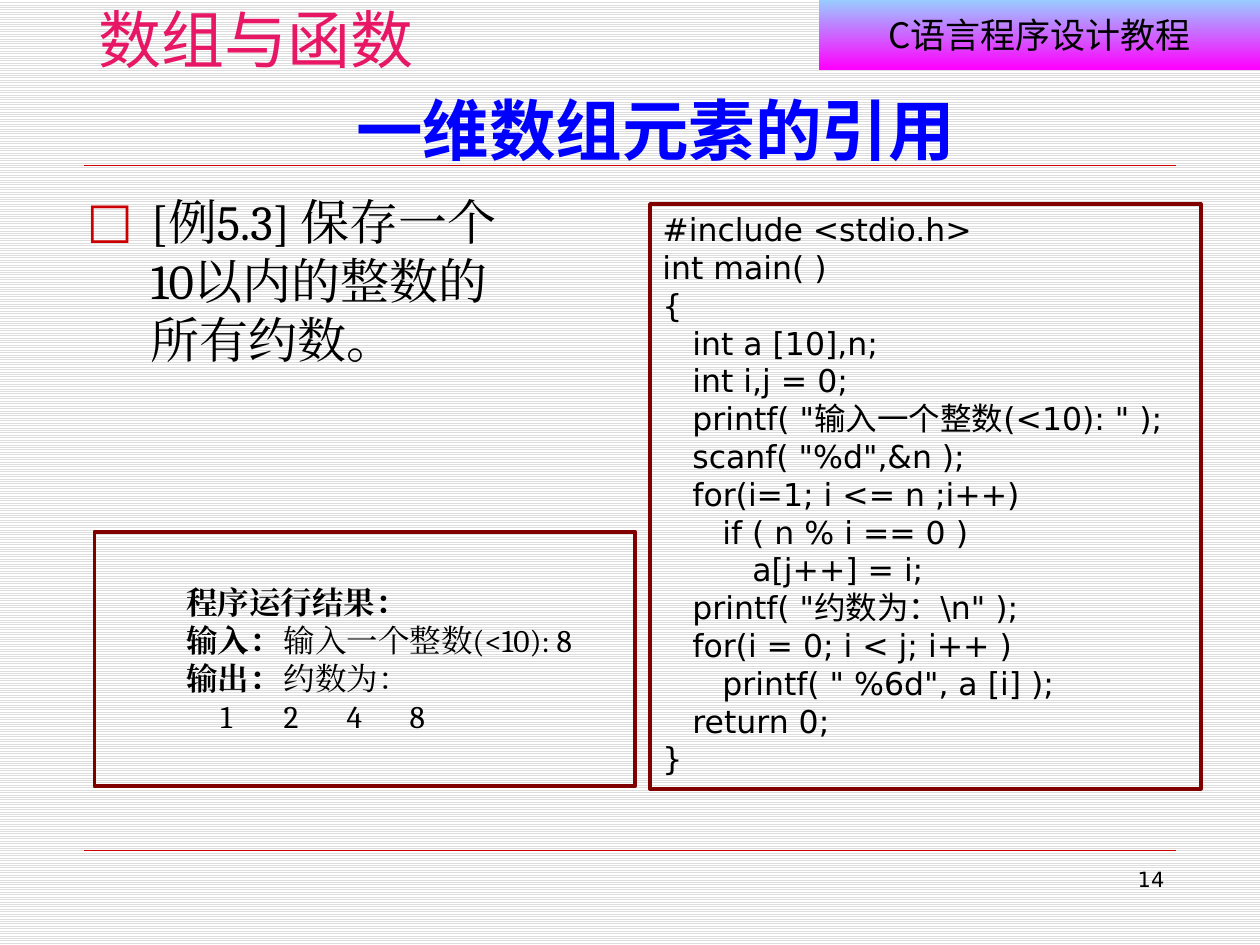
"""Build the slide on referencing elements of a one-dimensional array."""
from dataclasses import dataclass

from lxml import etree
from pptx import Presentation
from pptx.dml.color import RGBColor
from pptx.enum.dml import MSO_PATTERN
from pptx.enum.shapes import MSO_CONNECTOR, MSO_SHAPE
from pptx.enum.text import MSO_ANCHOR, PP_ALIGN
from pptx.oxml.ns import qn
from pptx.util import Inches, Pt

LIGHT_HORIZONTAL = MSO_PATTERN.LIGHT_HORIZONTAL
STRAIGHT = MSO_CONNECTOR.STRAIGHT
RECTANGLE = MSO_SHAPE.RECTANGLE
TOP, MIDDLE, BOTTOM = MSO_ANCHOR.TOP, MSO_ANCHOR.MIDDLE, MSO_ANCHOR.BOTTOM
LEFT, CENTER, RIGHT = PP_ALIGN.LEFT, PP_ALIGN.CENTER, PP_ALIGN.RIGHT


@dataclass(frozen=True)
class Theme:
    """Colours, fonts and type sizes of the slide."""
    stripe: str = "DDDDDD"
    paper: str = "FFFFFF"
    ink: str = "000000"
    rule: str = "CC0000"
    frame: str = "800000"
    title: str = "0000FF"
    chapter: str = "E81766"
    banner_top: str = "99CCFF"
    banner_bottom: str = "FF00FF"
    sans: str = "DejaVu Sans"
    serif: str = "Cambria"
    banner_font: str = "Noto Sans CJK SC"
    chapter_font: str = "Noto Sans CJK JP"
    title_size: int = 38
    chapter_size: int = 36
    body_size: int = 28
    banner_size: int = 20
    code_size: int = 18
    number_size: int = 12


THEME = Theme()

CODE = r'''#include <stdio.h>
int main( )
{
   int a [10],n;
   int i,j = 0;
   printf( "输入一个整数(<10): " );
   scanf( "%d",&n );
   for(i=1; i <= n ;i++)
      if ( n % i == 0 )
         a[j++] = i;
   printf( "约数为：\n" );
   for(i = 0; i < j; i++ )
      printf( " %6d", a [i] );
   return 0;
}'''

RESULTS = [
    ("程序运行结果：", ""),
    ("输入：", "\t输入一个整数(<10): 8"),
    ("输出：", "\t约数为："),
    ("", "\t1\t2\t4\t8"),
]
RESULT_INDENT = 0.73
RESULT_TABS = [1.69 + 0.39 * column for column in range(4)]


def rgb(value):
    """Turn a hex string into a colour."""
    return RGBColor.from_string(value)


def add_run(paragraph, text, font, size, color=THEME.ink, bold=False):
    """Append a run whose Latin and East Asian fonts agree."""
    run = paragraph.add_run()
    run.text = text
    settings = {"name": font, "size": Pt(size), "bold": bold}
    for attribute, value in settings.items():
        setattr(run.font, attribute, value)
    run.font.color.rgb = rgb(color)
    east_asian = etree.SubElement(run.font._element, qn("a:ea"))
    east_asian.set("typeface", font)


def set_frame(shape, anchor=TOP, wrap=True, side=0.1, edge=0.05):
    """Set the anchor, wrapping and insets of a shape's text."""
    frame = shape.text_frame
    settings = {
        "word_wrap": wrap,
        "vertical_anchor": anchor,
        "margin_left": Inches(side),
        "margin_right": Inches(side),
        "margin_top": Inches(edge),
        "margin_bottom": Inches(edge),
    }
    for attribute, value in settings.items():
        setattr(frame, attribute, value)
    return frame


def add_label(slide, box, text, font, size, color=THEME.ink, bold=False,
              align=LEFT, **layout):
    """Add a one-paragraph text box and return the paragraph."""
    label = slide.shapes.add_textbox(*map(Inches, box))
    paragraph = set_frame(label, **layout).paragraphs[0]
    paragraph.alignment = align
    add_run(paragraph, text, font, size, color, bold)
    return paragraph


def add_rule(slide, top):
    """Draw a thin horizontal rule across the content width."""
    rule = slide.shapes.add_connector(
        STRAIGHT, Inches(0.67), Inches(top), Inches(9.33), Inches(top))
    rule.line.color.rgb = rgb(THEME.rule)
    rule.line.width = Pt(0.25)
    etree.SubElement(rule._element.spPr, qn("a:effectLst"))


def add_panel(slide, box):
    """Add an unfilled framed rectangle."""
    panel = slide.shapes.add_shape(RECTANGLE, *map(Inches, box))
    panel.shadow.inherit = False
    panel.fill.background()
    panel.line.color.rgb = rgb(THEME.frame)
    panel.line.width = Pt(2.25)
    return panel


def add_banner(slide):
    """Add the gradient banner with the course name."""
    banner = slide.shapes.add_shape(
        RECTANGLE, Inches(6.5), Inches(0), Inches(3.5), Inches(0.55))
    banner.shadow.inherit = False
    banner.line.fill.background()
    banner.fill.gradient()
    banner.fill.gradient_angle = 270
    colors = (THEME.banner_top, THEME.banner_bottom)
    for stop, color in zip(banner.fill.gradient_stops, colors):
        stop.color.rgb = rgb(color)
    paragraph = set_frame(banner, MIDDLE).paragraphs[0]
    paragraph.alignment = CENTER
    add_run(paragraph, "C语言程序设计教程", THEME.banner_font, THEME.banner_size)


def add_bullet(paragraph, indent):
    """Give a paragraph a hanging square bullet."""
    properties = paragraph._p.get_or_add_pPr()
    properties.set("marL", str(Inches(indent)))
    properties.set("indent", str(-Inches(indent)))
    color = etree.SubElement(properties, qn("a:buClr"))
    etree.SubElement(color, qn("a:srgbClr")).set("val", THEME.rule)
    etree.SubElement(properties, qn("a:buFont")).set("typeface", THEME.sans)
    etree.SubElement(properties, qn("a:buChar")).set("char", "□")


def add_tabs(paragraph, indent, positions):
    """Set the first-line indent and left tab stops of a paragraph."""
    properties = paragraph._p.get_or_add_pPr()
    properties.set("marL", "0")
    properties.set("indent", str(Inches(indent)))
    tabs = etree.SubElement(properties, qn("a:tabLst"))
    for position in positions:
        etree.SubElement(tabs, qn("a:tab"), pos=str(Inches(position)), algn="l")


def add_lines(frame, count):
    """Yield the given number of left-aligned paragraphs."""
    for index in range(count):
        paragraph = frame.add_paragraph() if index else frame.paragraphs[0]
        paragraph.alignment = LEFT
        yield paragraph


def add_code(slide):
    """Add the framed program listing."""
    frame = set_frame(add_panel(slide, (5.16, 1.62, 4.37, 4.64)))
    lines = CODE.split("\n")
    for paragraph, line in zip(add_lines(frame, len(lines)), lines):
        add_run(paragraph, line, THEME.sans, THEME.code_size)


def add_results(slide):
    """Add the framed sample run of the program."""
    panel = add_panel(slide, (0.75, 4.22, 4.29, 2.02))
    frame = set_frame(panel, MIDDLE, side=0)
    paragraphs = add_lines(frame, len(RESULTS))
    for paragraph, (heading, value) in zip(paragraphs, RESULTS):
        add_tabs(paragraph, RESULT_INDENT, RESULT_TABS)
        for text, bold in ((heading, True), (value, False)):
            if text:
                add_run(paragraph, text, THEME.serif, THEME.code_size, bold=bold)


def main():
    """Build and save the slide."""
    deck = Presentation()
    deck.slide_width, deck.slide_height = Inches(10), Inches(7.5)
    slide = deck.slides.add_slide(deck.slide_layouts[6])
    background = slide.background.fill
    background.patterned()
    background.pattern = LIGHT_HORIZONTAL
    background.fore_color.rgb = rgb(THEME.stripe)
    background.back_color.rgb = rgb(THEME.paper)

    add_rule(slide, 6.75)
    add_banner(slide)
    add_label(slide, (0.2, 0, 3.66, 0.41), "数组与函数", THEME.chapter_font,
              THEME.chapter_size, THEME.chapter, align=CENTER, wrap=False, edge=0)
    add_rule(slide, 1.31)
    add_label(slide, (0.83, 0.65, 8.75, 0.74), "一维数组元素的引用", THEME.sans,
              THEME.title_size, THEME.title, True, CENTER, anchor=BOTTOM)
    task = add_label(slide, (0.59, 1.47, 3.7, 1.97),
                     "[例5.3] 保存一个10以内的整数的所有约数。",
                     THEME.serif, THEME.body_size)
    add_bullet(task, 0.51)
    add_label(slide, (7.17, 6.83, 2.17, 0.52), "14", THEME.sans,
              THEME.number_size, align=RIGHT)
    add_code(slide)
    add_results(slide)
    deck.save("out.pptx")


if __name__ == "__main__":
    main()
